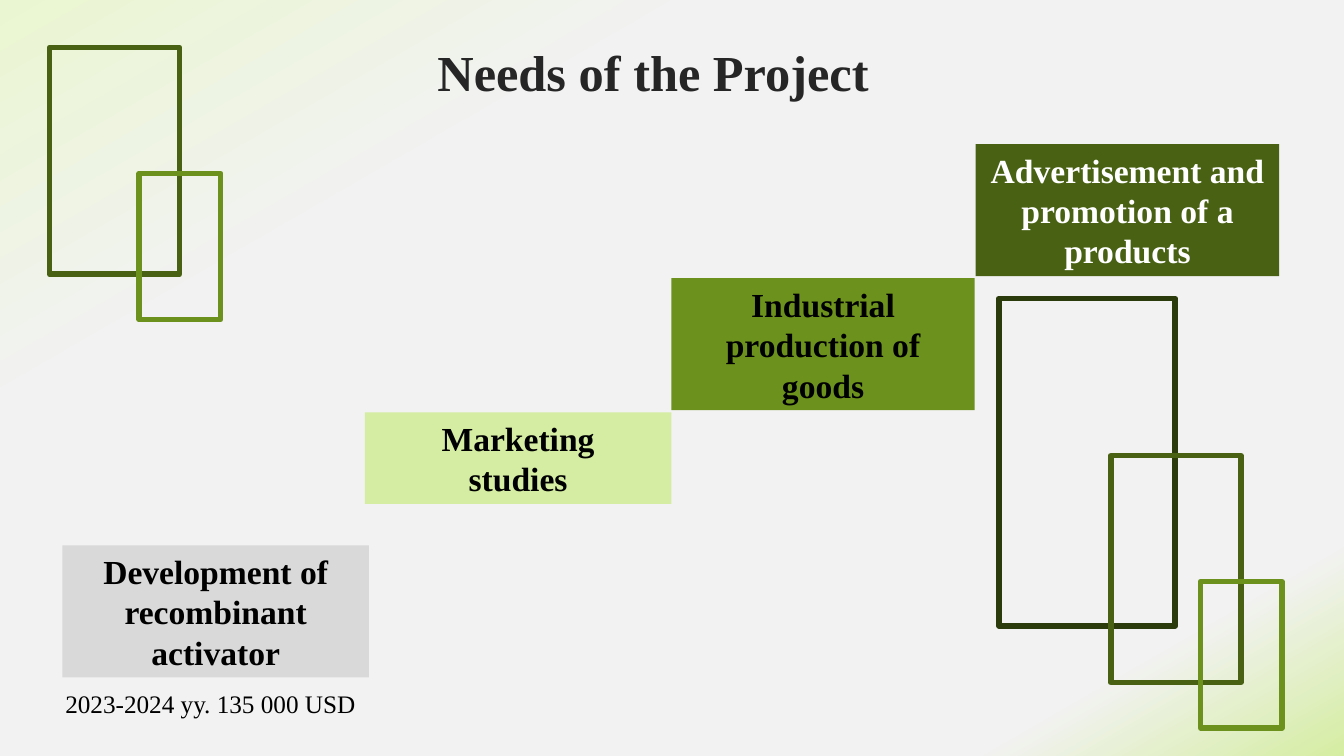
from typing import NamedTuple

from lxml import etree
from pptx import Presentation
from pptx.dml.color import RGBColor
from pptx.enum.shapes import MSO_SHAPE
from pptx.enum.text import MSO_ANCHOR, MSO_AUTO_SIZE, PP_ALIGN
from pptx.oxml.ns import qn
from pptx.util import Pt

FONT = "Times New Roman"
BLACK = RGBColor(0x00, 0x00, 0x00)
WHITE = RGBColor(0xFF, 0xFF, 0xFF)
CHARCOAL = RGBColor(0x26, 0x26, 0x26)
GREY = RGBColor(0xD9, 0xD9, 0xD9)
PALE_GREY = RGBColor(0xF2, 0xF2, 0xF2)
MIST = RGBColor(0xEA, 0xF6, 0xD1)
LIME = RGBColor(0xD5, 0xED, 0xA2)
GREEN = RGBColor(0x6C, 0x92, 0x1D)
OLIVE = RGBColor(0x48, 0x61, 0x13)
FOREST = RGBColor(0x2B, 0x3B, 0x0B)


class Box(NamedTuple):
    left: float
    top: float
    width: float
    height: float

    def points(self):
        return [Pt(v) for v in self]


class Step(NamedTuple):
    box: Box
    text: str
    fill: RGBColor
    color: RGBColor = BLACK


class Frame(NamedTuple):
    box: Box
    color: RGBColor


BACKGROUND_STOPS = [(0, MIST), (27, PALE_GREY), (86, PALE_GREY), (100, LIME)]
BACKGROUND_ANGLE = 60

STEPS = [
    Step(Box(44.64, 389.52, 218.88, 94.32), "Development of recombinant activator", GREY),
    Step(Box(260.64, 294.48, 218.88, 65.52), "Marketing\nstudies", LIME),
    Step(Box(479.52, 198.72, 216.72, 94.32), "Industrial production of goods", GREEN),
    Step(Box(696.96, 102.96, 216.72, 94.32), "Advertisement and promotion of a products",
         OLIVE, WHITE),
]

FRAMES = [
    Frame(Box(659.52, 267.12, 234, 126), FOREST),
    Frame(Box(758.88, 360, 162, 92.88), OLIVE),
    Frame(Box(834.48, 438.48, 104.4, 58.32), GREEN),
]
LEFT_SHIFT = (-758.16, -291.6)


def paint_background(slide) -> None:
    fill = slide.background.fill
    fill.gradient()
    grad = slide.background._cSld.find(".//" + qn("a:gradFill"))
    stops = grad.find(qn("a:gsLst"))
    for old in list(stops):
        stops.remove(old)
    for percent, color in BACKGROUND_STOPS:
        stop = etree.SubElement(stops, qn("a:gs"), pos=str(percent * 1000))
        etree.SubElement(stop, qn("a:srgbClr"), val=str(color))
    line = grad.find(qn("a:lin"))
    line.set("ang", str(BACKGROUND_ANGLE * 60000))
    line.set("scaled", "0")


def write(sp, text: str, *, size: float, color: RGBColor = BLACK, bold: bool = False,
          align=PP_ALIGN.LEFT, anchor=MSO_ANCHOR.TOP, grow: bool = True,
          spacing: float | None = None) -> None:
    """Fill a shape with one paragraph per line of text."""
    tf = sp.text_frame
    tf.text = text
    tf.word_wrap = True
    tf.vertical_anchor = anchor
    tf.auto_size = MSO_AUTO_SIZE.SHAPE_TO_FIT_TEXT if grow else MSO_AUTO_SIZE.NONE
    for p in tf.paragraphs:
        p.alignment = align
        if spacing:
            p.line_spacing = Pt(spacing)
        for r in p.runs:
            r.font.name = FONT
            r.font.size = Pt(size)
            r.font.bold = bold
            r.font.color.rgb = color


def add_step(slide, step: Step) -> None:
    sp = slide.shapes.add_shape(MSO_SHAPE.RECTANGLE, *step.box.points())
    sp.shadow.inherit = False
    sp.fill.solid()
    sp.fill.fore_color.rgb = step.fill
    sp.line.fill.background()
    write(sp, step.text, size=24, color=step.color, bold=True, align=PP_ALIGN.CENTER,
          anchor=MSO_ANCHOR.MIDDLE, spacing=28.8)


def add_frames(slide, frames: list[Frame], dx: float = 0, dy: float = 0) -> None:
    """Group overlapping outlines, each turned upright, moved by (dx, dy)."""
    group = slide.shapes.add_group_shape()
    for box, color in frames:
        moved = box._replace(left=box.left + dx, top=box.top + dy)
        sp = group.shapes.add_shape(MSO_SHAPE.RECTANGLE, *moved.points())
        sp.rotation = 270
        sp.shadow.inherit = False
        sp.fill.background()
        sp.line.color.rgb = color
        sp.line.width = Pt(4)


def main() -> None:
    prs = Presentation()
    prs.slide_width, prs.slide_height = Pt(960), Pt(540)
    slide = prs.slides.add_slide(prs.slide_layouts[6])
    paint_background(slide)

    title = slide.shapes.add_textbox(*Box(128.16, 21.6, 676.8, 66.24).points())
    write(title, "Needs of the Project", size=36, color=CHARCOAL, bold=True,
          align=PP_ALIGN.CENTER, grow=False)
    title.text_frame.margin_top = Pt(8)

    add_frames(slide, FRAMES)
    add_frames(slide, FRAMES[1:], *LEFT_SHIFT)
    for step in STEPS:
        add_step(slide, step)

    budget = slide.shapes.add_textbox(*Box(39.6, 488.16, 235.44, 28.8).points())
    write(budget, "2023-2024 yy. 135 000 USD", size=18)

    prs.save("out.pptx")


if __name__ == "__main__":
    main()
